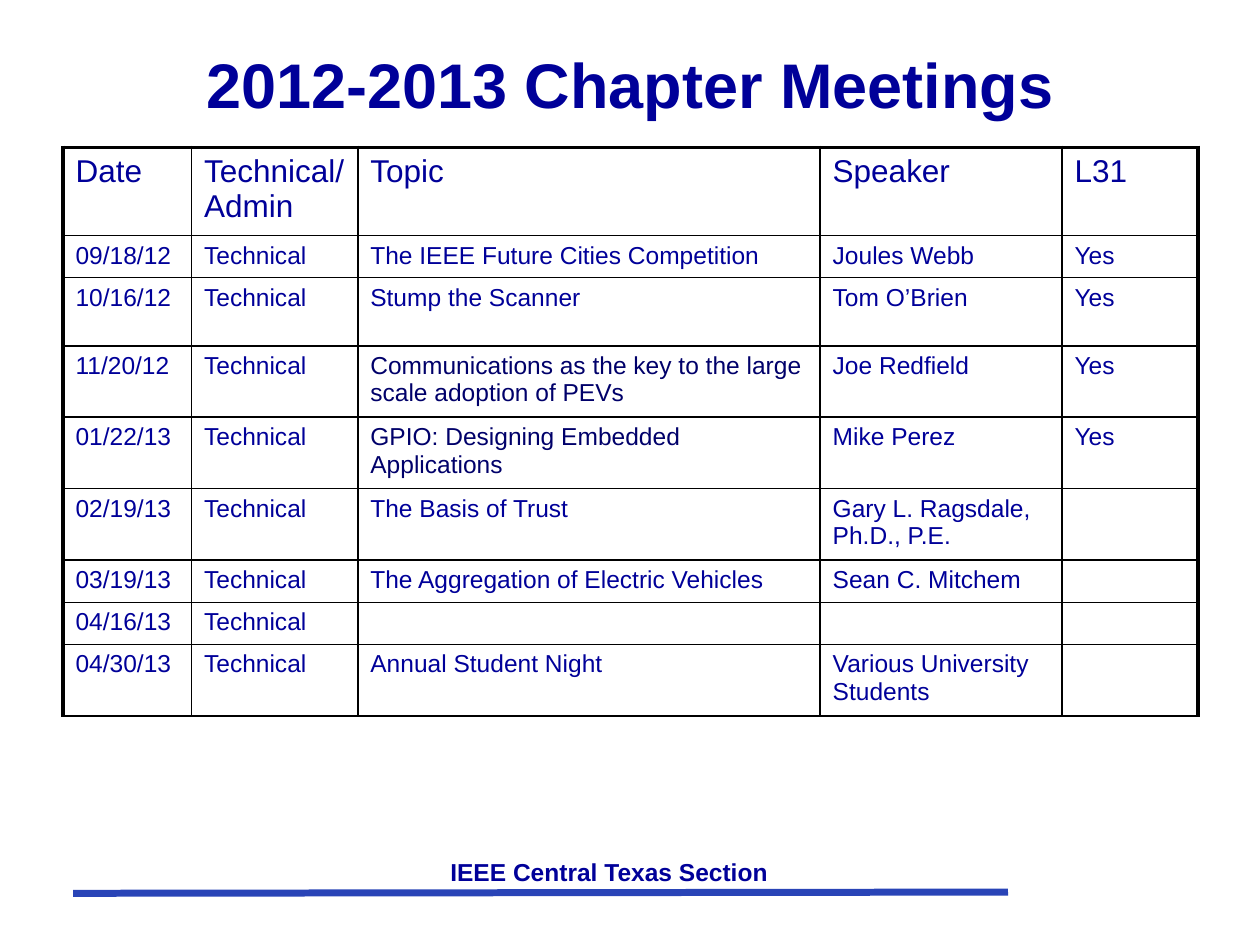
"""Build the slide that lists the 2012-2013 chapter meetings."""
from typing import NamedTuple

from lxml.etree import SubElement
from pptx import Presentation
from pptx.dml.color import RGBColor
from pptx.enum.shapes import MSO_CONNECTOR
from pptx.enum.text import MSO_ANCHOR, PP_ALIGN
from pptx.oxml import parse_xml
from pptx.oxml.ns import nsdecls, qn
from pptx.util import Inches, Pt

NAVY = RGBColor(0x00, 0x00, 0x99)
DARK_NAVY = RGBColor(0x00, 0x00, 0x6A)
RULE_BLUE = RGBColor(0x29, 0x44, 0xB7)
BLACK = RGBColor(0x00, 0x00, 0x00)
FONT = "Arial"
THIN, THICK = 1, 2.25
COLUMN_WIDTHS = (1.02, 1.32, 3.67, 1.92, 1.08)
HEADER_HEIGHT, SINGLE, DOUBLE = 0.66, 0.32, 0.54
HEADINGS = ("Date", "Technical/Admin", "Topic", "Speaker", "L31")


class Meeting(NamedTuple):
    date: str
    kind: str = "Technical"
    topic: str = ""
    speaker: str = ""
    reported: str = ""
    height: float = SINGLE
    topic_color: RGBColor = NAVY


MEETINGS = (
    Meeting("09/18/12", topic="The IEEE Future Cities Competition",
            speaker="Joules Webb", reported="Yes"),
    Meeting("10/16/12", topic="Stump the Scanner", speaker="Tom O’Brien",
            reported="Yes", height=DOUBLE),
    Meeting("11/20/12", topic="Communications as the key to the large scale adoption of PEVs",
            speaker="Joe Redfield", reported="Yes", height=DOUBLE, topic_color=DARK_NAVY),
    Meeting("01/22/13", topic="GPIO: Designing Embedded Applications",
            speaker="Mike Perez", reported="Yes", height=DOUBLE, topic_color=DARK_NAVY),
    Meeting("02/19/13", topic="The Basis of Trust",
            speaker="Gary L. Ragsdale, Ph.D., P.E.", height=DOUBLE),
    Meeting("03/19/13", topic="The Aggregation of Electric Vehicles",
            speaker="Sean C. Mitchem"),
    Meeting("04/16/13"),
    Meeting("04/30/13", topic="Annual Student Night",
            speaker="Various University Students", height=DOUBLE),
)


def write_text(frame, text: str, *, size: int, color: RGBColor = NAVY,
               bold: bool = False, align=PP_ALIGN.LEFT) -> None:
    frame.word_wrap = True
    paragraph = frame.paragraphs[0]
    paragraph.alignment = align
    if not text:
        SubElement(paragraph._p, qn("a:endParaRPr"), sz=str(size * 100))
        return
    run = paragraph.add_run()
    run.text = text
    run.font.name = FONT
    run.font.size = Pt(size)
    run.font.bold = bold
    run.font.color.rgb = color


def add_label(slide, text: str, box: tuple[float, ...], size: int) -> None:
    frame = slide.shapes.add_textbox(*map(Inches, box)).text_frame
    frame.vertical_anchor = MSO_ANCHOR.MIDDLE
    write_text(frame, text, size=size, bold=True, align=PP_ALIGN.CENTER)


def set_borders(cell, widths: dict[str, float]) -> None:
    properties = cell._tc.get_or_add_tcPr()
    for index, (side, width) in enumerate(widths.items()):
        properties.insert(index, parse_xml(
            f'<a:ln{side} {nsdecls("a")} w="{int(Pt(width))}"><a:solidFill>'
            f'<a:srgbClr val="{str(BLACK)}"/></a:solidFill></a:ln{side}>'))


def add_meeting_table(slide) -> None:
    heights = [HEADER_HEIGHT] + [meeting.height for meeting in MEETINGS]
    last_column = len(COLUMN_WIDTHS) - 1
    table = slide.shapes.add_table(
        len(heights), len(COLUMN_WIDTHS), Inches(0.5), Inches(1.17),
        Inches(sum(COLUMN_WIDTHS)), Inches(sum(heights))).table
    table.first_row = table.horz_banding = False
    for column, width in zip(table.columns, COLUMN_WIDTHS):
        column.width = Inches(width)
    for row, height in zip(table.rows, heights):
        row.height = Inches(height)
    rows = [HEADINGS] + [meeting[:len(HEADINGS)] for meeting in MEETINGS]
    for row_index, texts in enumerate(rows):
        for column_index, text in enumerate(texts):
            is_topic = row_index > 0 and HEADINGS[column_index] == "Topic"
            cell = table.cell(row_index, column_index)
            cell.fill.background()
            write_text(cell.text_frame, text, size=14 if row_index else 18,
                       color=MEETINGS[row_index - 1].topic_color if is_topic else NAVY)
            set_borders(cell, {
                "L": THIN if column_index else THICK,
                "R": THICK if column_index == last_column else THIN,
                "T": THIN if row_index else THICK,
                "B": THIN,
            })


def add_footer_rule(slide) -> None:
    rule = slide.shapes.add_connector(
        MSO_CONNECTOR.STRAIGHT, Inches(0.58), Inches(7.09), Inches(8), Inches(7.08))
    rule.line.color.rgb = RULE_BLUE
    rule.line.width = Pt(4)
    SubElement(rule._element.spPr, qn("a:effectLst"))


def main() -> None:
    presentation = Presentation()
    presentation.slide_width, presentation.slide_height = Inches(10), Inches(7.5)
    slide = presentation.slides.add_slide(presentation.slide_layouts[6])
    add_footer_rule(slide)
    add_label(slide, "IEEE Central Texas Section", (1.75, 6.75, 6.17, 0.33), 14)
    add_label(slide, "2012-2013 Chapter Meetings", (0.75, 0.33, 8.5, 0.67), 36)
    add_meeting_table(slide)
    presentation.save("out.pptx")


if __name__ == "__main__":
    main()
